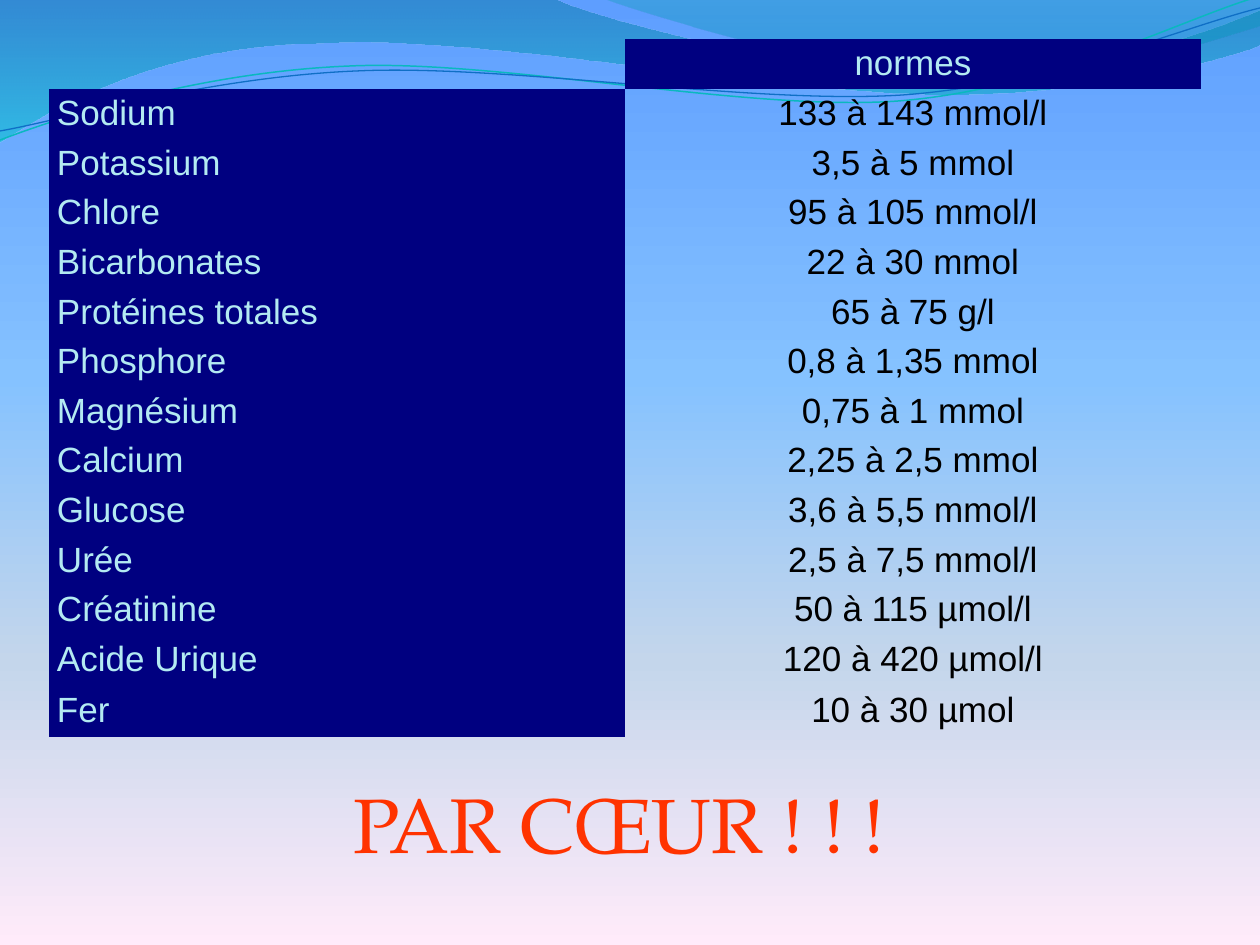
from dataclasses import dataclass

from lxml import etree
from pptx import Presentation
from pptx import util as u
from pptx.dml.color import RGBColor
from pptx.enum import text
from pptx.oxml.ns import qn

SCALE = 914400 / 126  # EMU per px
NAVY, PALE, BLACK, RED = "000080", "B3EAF2", "000000", "FF3300"


@dataclass
class Stop:
    position: int
    color: str
    opacity: int = 100


@dataclass
class Wave:
    """Outline whose steps are line ends (x, y) or Bézier triples (x1, y1, x2, y2, x, y)."""
    start: tuple[int, int]
    steps: list[tuple[int, ...]]
    stops: list[Stop] | None = None
    line: str | None = None
    width: float = 0


@dataclass
class Norm:
    name: str
    value: str


BACKGROUND = [Stop(0, "5E9EFF"), Stop(40, "85C2FF"), Stop(70, "C4D6EB"), Stop(100, "FFEBFA")]

WAVES = [
    Wave((0, -1), [(554, -1), (600, 21, 837, 79, 955, 79), (1075, 79, 1207, 33, 1260, 11),
                   (1261, 45), (1239, 55, 1096, 96, 940, 94), (784, 94, 481, 35, 324, 43),
                   (163, 44, 58, 105, -1, 142), (0, -1)],
         stops=[Stop(0, "0074A1", 45), Stop(100, "00C6CF", 55)]),
    Wave((604, -1), [(641, 14, 859, 78, 969, 82), (1079, 87, 1211, 40, 1260, 26),
                     (1260, -1), (604, -1)],
         stops=[Stop(0, "00A1A9", 30), Stop(80, "008BBF", 45)]),
    Wave((0, 140), [(60, 117, 199, 72, 349, 66), (498, 59, 747, 112, 898, 101),
                    (1050, 89, 1182, 19, 1257, -3)], line="0AB8BF", width=0.85),
    Wave((0, 131), [(59, 121, 207, 77, 357, 71), (508, 64, 752, 105, 903, 95),
                    (1053, 84, 1186, 26, 1260, 8)], line="0F6FC6", width=0.75),
]

NORMS = [
    Norm("", "normes"),
    Norm("Sodium", "133 à 143 mmol/l"),
    Norm("Potassium", "3,5 à 5 mmol"),
    Norm("Chlore", "95 à 105 mmol/l"),
    Norm("Bicarbonates", "22 à 30 mmol"),
    Norm("Protéines totales", "65 à 75 g/l"),
    Norm("Phosphore", "0,8 à 1,35 mmol"),
    Norm("Magnésium", "0,75 à 1 mmol"),
    Norm("Calcium", "2,25 à 2,5 mmol"),
    Norm("Glucose", "3,6 à 5,5 mmol/l"),
    Norm("Urée", "2,5 à 7,5 mmol/l"),
    Norm("Créatinine", "50 à 115 µmol/l"),
    Norm("Acide Urique", "120 à 420 µmol/l"),
    Norm("Fer", "10 à 30 µmol"),
]


def px(length: float) -> u.Emu:
    return u.Emu(round(length * SCALE))


def rgb(color: str) -> RGBColor:
    return RGBColor.from_string(color)


def format_text(para, font: str, size: int, color: str, align) -> None:
    para.alignment = align
    for span in para.runs:
        span.font.name = font
        span.font.size = u.Pt(size)
        span.font.color.rgb = rgb(color)


def set_gradient(fill, element, stops: list[Stop]) -> None:
    """Fill from top to bottom with any number of stops, each with its opacity."""
    fill.gradient()
    gradient = next(element.iter(qn("a:gradFill")))
    for child in list(gradient):
        gradient.remove(child)
    stop_list = etree.SubElement(gradient, qn("a:gsLst"))
    for stop in stops:
        entry = etree.SubElement(stop_list, qn("a:gs"), pos=str(stop.position * 1000))
        color = etree.SubElement(entry, qn("a:srgbClr"), val=stop.color)
        if stop.opacity < 100:
            etree.SubElement(color, qn("a:alpha"), val=str(stop.opacity * 1000))
    etree.SubElement(gradient, qn("a:lin"), ang="5400000", scaled="0")


def bend(shape, steps: list[tuple[int, ...]]) -> None:
    """Join the three straight segments of each Bézier triple into one curve."""
    segments = iter(list(shape.element.iter(qn("a:lnTo"))))
    for step in steps:
        first = next(segments)
        if len(step) == 6:
            curve = etree.Element(qn("a:cubicBezTo"))
            first.addprevious(curve)
            for segment in (first, next(segments), next(segments)):
                curve.append(segment[0])
                segment.getparent().remove(segment)


def draw_wave(page, wave: Wave) -> None:
    left, top = wave.start
    points = [(px(step[i]), px(step[i + 1])) for step in wave.steps for i in range(0, len(step), 2)]
    builder = page.shapes.build_freeform(px(left), px(top))
    builder.add_line_segments(points, close=wave.stops is not None)
    shape = builder.convert_to_shape()
    bend(shape, wave.steps)
    shape.shadow.inherit = False
    if wave.stops:
        set_gradient(shape.fill, shape.element, wave.stops)
    else:
        shape.fill.background()
    if wave.line:
        shape.line.color.rgb = rgb(wave.line)
        shape.line.width = u.Pt(wave.width)
    else:
        shape.line.fill.background()


def fill_cell(cell, words: str, dark: bool, align) -> None:
    cell.margin_left = cell.margin_right = px(8)
    cell.margin_top = cell.margin_bottom = px(4)
    cell.vertical_anchor = text.MSO_ANCHOR.MIDDLE
    if dark:
        cell.fill.solid()
        cell.fill.fore_color.rgb = rgb(NAVY)
    else:
        cell.fill.background()
    if words:
        cell.text = words
        format_text(cell.text_frame.paragraphs[0], "Arial", 20, PALE if dark else BLACK, align)


def draw_norms(page) -> None:
    frame = page.shapes.add_table(len(NORMS), 2, px(49), px(39), px(1152), px(698))
    table = frame.table
    table.first_row = table.horz_banding = False
    style = next(frame.element.iter(qn("a:tableStyleId")))
    style.text = "{2D5ABB26-0587-4C30-8999-92F81FD0307C}"  # no style, no grid
    last = len(NORMS) - 1
    for index, norm in enumerate(NORMS):
        table.rows[index].height = px(53) if index == last else px(645 / last)
        fill_cell(table.cell(index, 0), norm.name, bool(norm.name), text.PP_ALIGN.LEFT)
        fill_cell(table.cell(index, 1), norm.value, index == 0, text.PP_ALIGN.CENTER)


def place_title(page, words: str) -> None:
    box = page.shapes.title
    box.left, box.top, box.width, box.height = px(292), px(770), px(655), px(105)
    frame = box.text_frame
    frame.text = words
    frame.word_wrap = True
    frame.auto_size = text.MSO_AUTO_SIZE.NONE
    frame.vertical_anchor = text.MSO_ANCHOR.TOP
    format_text(frame.paragraphs[0], "TeX Gyre Pagella", 44, RED, text.PP_ALIGN.CENTER)


def main() -> None:
    deck = Presentation()
    deck.slide_width, deck.slide_height = px(1260), px(945)
    page = deck.slides.add_slide(deck.slide_layouts[5])
    set_gradient(page.background.fill, page.element, BACKGROUND)
    for wave in WAVES:
        draw_wave(page, wave)
    draw_norms(page)
    place_title(page, "PAR CŒUR ! ! !")
    deck.save("out.pptx")


if __name__ == "__main__":
    main()
